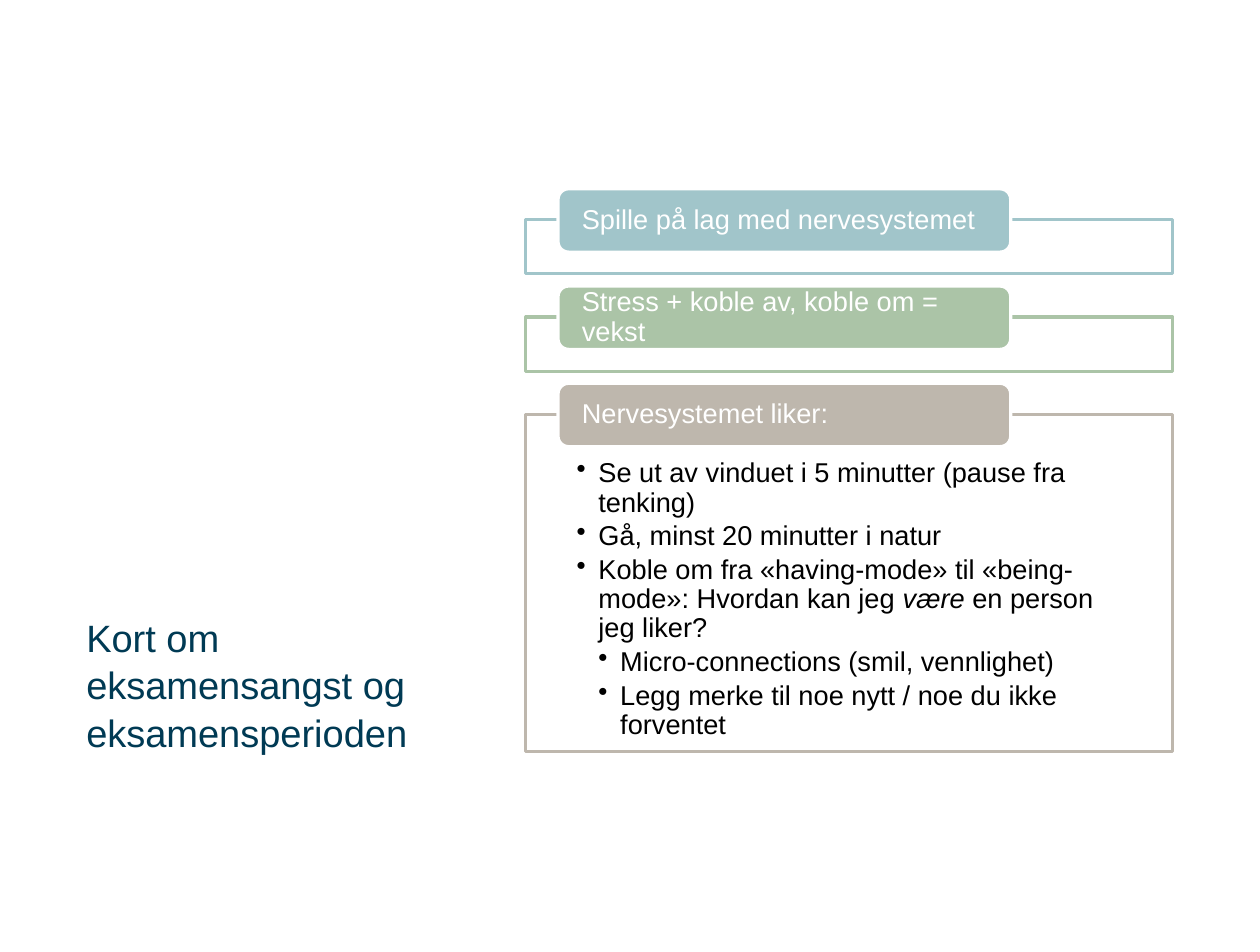
from dataclasses import dataclass

from lxml import etree
from pptx import Presentation
from pptx.dml.color import RGBColor
from pptx.enum import shapes, text
from pptx.oxml import ns
from pptx.util import Inches, Pt


@dataclass(frozen=True)
class Theme:
    """Colours, type sizes and line widths of the slide."""
    font: str = "Arial"
    title_colour: str = "003A54"
    body_colour: str = "000000"
    white: str = "FFFFFF"
    blue: str = "A1C5CA"
    green: str = "ABC4A7"
    sand: str = "BEB7AD"
    title_size: float = 23.8
    body_size: float = 17
    line_width: float = 2


THEME = Theme()
FRAME_GAP = 0.375
SECTIONS = [
    ("Spille på lag med nervesystemet", THEME.blue, 0.47, []),
    ("Stress + koble av, koble om = vekst", THEME.green, 0.47, []),
    ("Nervesystemet liker:", THEME.sand, 2.93, [
        (1, ["Se ut av vinduet i 5 minutter (pause fra tenking)"]),
        (1, ["Gå, minst 20 minutter i natur"]),
        (1, ["Koble om fra «having-mode» til «being-mode»: Hvordan kan jeg ",
             "være", " en person jeg liker?"]),
        (2, ["Micro-connections (smil, vennlighet)"]),
        (2, ["Legg merke til noe nytt / noe du ikke forventet"]),
    ]),
]


def set_frame(shape, anchor, insets):
    """Set wrapping, anchor and insets (left, top, right, bottom)."""
    frame = shape.text_frame
    frame.word_wrap = True
    frame.vertical_anchor = anchor
    (frame.margin_left, frame.margin_top,
     frame.margin_right, frame.margin_bottom) = map(Inches, insets)
    return frame


def style_paragraph(paragraph, size, colour, spacing):
    """Left-align a paragraph and format its runs."""
    paragraph.alignment = text.PP_ALIGN.LEFT
    paragraph.line_spacing = spacing
    for run in paragraph.runs:
        run.font.name = THEME.font
        run.font.size = Pt(size)
        run.font.color.rgb = RGBColor.from_string(colour)


def add_box(slide, kind, box, fill, line):
    """Add a filled and outlined shape without a shadow."""
    shape = slide.shapes.add_shape(kind, *map(Inches, box))
    shape.shadow.inherit = False
    shape.fill.solid()
    shape.fill.fore_color.rgb = RGBColor.from_string(fill)
    shape.line.color.rgb = RGBColor.from_string(line)
    shape.line.width = Pt(THEME.line_width)
    return shape


def add_bullets(shape, bullets):
    """Fill a section frame with its bulleted list."""
    frame = set_frame(shape, text.MSO_ANCHOR.TOP, (0.44, 0.39, 0.44, 0.13))
    for index, (level, parts) in enumerate(bullets):
        paragraph = frame.add_paragraph() if index else frame.paragraphs[0]
        paragraph.level = level
        properties = paragraph._p.get_or_add_pPr()
        properties.set("marL", str(Inches(0.19 * level)))
        properties.set("indent", str(Inches(-0.19)))
        etree.SubElement(properties, ns.qn("a:buChar")).set("char", "•")
        for part in parts:
            paragraph.add_run().text = part
        style_paragraph(paragraph, THEME.body_size, THEME.body_colour, 0.9)
        paragraph.space_after = Pt(2.6)
        if len(parts) > 1:
            paragraph.runs[1].font.italic = True


def add_section(slide, box, heading, colour, bullets):
    """Add an outlined frame with a heading tab over its top edge."""
    left, top, width, height = box
    outline = add_box(slide, shapes.MSO_SHAPE.RECTANGLE, box, THEME.white, colour)
    if bullets:
        add_bullets(outline, bullets)
    tab_box = (left + 0.28, top - 0.27, width * 0.7, 0.55)
    tab = add_box(slide, shapes.MSO_SHAPE.ROUNDED_RECTANGLE, tab_box, colour, THEME.white)
    frame = set_frame(tab, text.MSO_ANCHOR.MIDDLE, (0.18, 0, 0.18, 0))
    frame.text = heading
    style_paragraph(frame.paragraphs[0], THEME.body_size, THEME.white, 0.9)


def add_sections(slide, left, top, width):
    """Stack the sections with equal gaps."""
    for heading, colour, height, bullets in SECTIONS:
        add_section(slide, (left, top, width, height), heading, colour, bullets)
        top += height + FRAME_GAP


def add_title(slide, box):
    """Add the title, resting on the bottom of its box."""
    title = slide.shapes.add_textbox(*map(Inches, box))
    frame = set_frame(title, text.MSO_ANCHOR.BOTTOM, (0, 0, 0, 0))
    frame.text = "Kort om eksamensangst og eksamensperioden"
    style_paragraph(frame.paragraphs[0], THEME.title_size, THEME.title_colour, 1.04)


def main():
    """Build and save the presentation."""
    presentation = Presentation()
    presentation.slide_width = Inches(10.95)
    presentation.slide_height = Inches(8.27)
    slide = presentation.slides.add_slide(presentation.slide_layouts[6])
    add_title(slide, (0.75, 1.56, 3.03, 5))
    add_sections(slide, 4.57, 1.91, 5.62)
    presentation.save("out.pptx")


if __name__ == "__main__":
    main()
